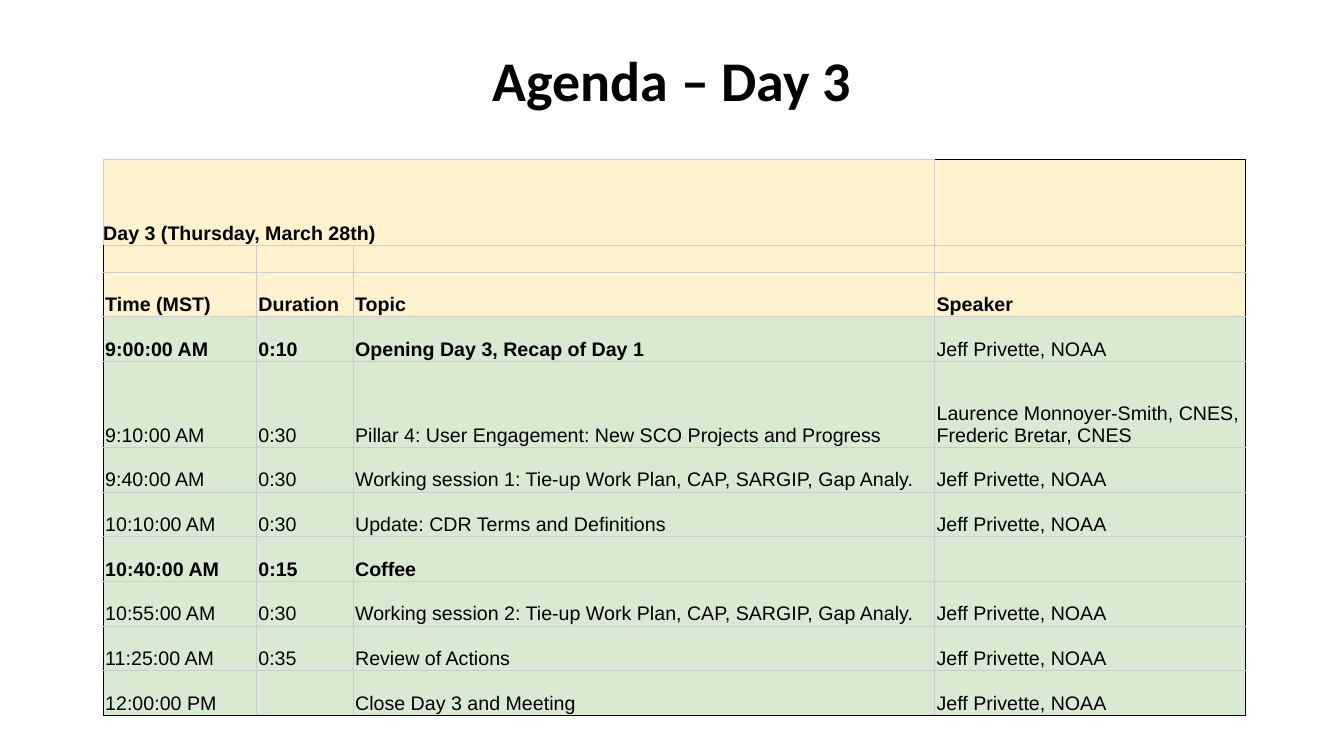
import pptx
import pptx.dml.color
import pptx.enum.text
import pptx.util
from dataclasses import dataclass
from lxml import etree
from pptx.oxml.ns import qn

Pt = pptx.util.Pt
Anchor = pptx.enum.text.MSO_ANCHOR


@dataclass(frozen=True)
class Theme:
    """Colours, fonts and type sizes of the agenda."""
    ink: str = "000000"
    heading_fill: str = "FFF2CC"
    session_fill: str = "D9EAD3"
    grid: str = "CCCCCC"
    frame: str = "000000"
    title_font: str = "Calibri"
    table_font: str = "Arial"
    title_size: int = 40
    table_size: int = 14
    line_width: float = 0.5


THEME = Theme()
HOST = "Jeff Privette, NOAA"
HEADING_ROWS = 3
COLUMN_WIDTHS = (109.4, 69.1, 415.4, 222.2)
STANDARD, TALL, NARROW = 31.9, 61.5, 19.2
AGENDA = [
    (TALL, True, ("Day 3 (Thursday, March 28th)", "", "", "")),
    (NARROW, True, ("", "", "", "")),
    (STANDARD, True, ("Time (MST)", "Duration", "Topic", "Speaker")),
    (STANDARD, True, ("9:00:00 AM", "0:10", "Opening Day 3, Recap of Day 1", HOST)),
    (TALL, False, ("9:10:00 AM", "0:30",
                   "Pillar 4: User Engagement: New SCO Projects and Progress",
                   "Laurence Monnoyer-Smith, CNES,\nFrederic Bretar, CNES")),
    (STANDARD, False, ("9:40:00 AM", "0:30",
                       "Working session 1: Tie-up Work Plan, CAP, SARGIP, Gap Analy.", HOST)),
    (STANDARD, False, ("10:10:00 AM", "0:30", "Update: CDR Terms and Definitions", HOST)),
    (STANDARD, True, ("10:40:00 AM", "0:15", "Coffee", "")),
    (STANDARD, False, ("10:55:00 AM", "0:30",
                       "Working session 2: Tie-up Work Plan, CAP, SARGIP, Gap Analy.", HOST)),
    (STANDARD, False, ("11:25:00 AM", "0:35", "Review of Actions", HOST)),
    (STANDARD, False, ("12:00:00 PM", "", "Close Day 3 and Meeting", HOST)),
]


def apply(target, values):
    """Set each named attribute on the target."""
    for name, value in values.items():
        setattr(target, name, value)


def write(paragraph, words, font, size, bold):
    """Write words into a paragraph with one format."""
    paragraph.text = words
    for run in paragraph.runs:
        apply(run.font, {"name": font, "size": Pt(size), "bold": bold})
        run.font.color.rgb = pptx.dml.color.RGBColor.from_string(THEME.ink)


def add_title(slide, words):
    """Place and format the slide title."""
    title = slide.shapes.title
    apply(title, {"left": Pt(152), "top": Pt(11.5), "width": Pt(656), "height": Pt(90)})
    apply(title.text_frame, {"word_wrap": True, "vertical_anchor": Anchor.MIDDLE})
    heading = title.text_frame.paragraphs[0]
    write(heading, words, THEME.title_font, THEME.title_size, True)
    heading.alignment = pptx.enum.text.PP_ALIGN.CENTER


def border_cell(cell, colours):
    """Draw the left, right, top and bottom borders of a cell."""
    properties = cell._tc.get_or_add_tcPr()
    for position, (side, colour) in enumerate(zip("LRTB", colours)):
        line = etree.Element(qn(f"a:ln{side}"), w=str(int(Pt(THEME.line_width))))
        paint = etree.SubElement(line, qn("a:solidFill"))
        etree.SubElement(paint, qn("a:srgbClr"), val=colour)
        properties.insert(position, line)


def border_colours(row, column):
    """Return the border colours that frame the agenda at this cell."""
    last_column = column == len(COLUMN_WIDTHS) - 1
    framed = (column == 0 and row > 0, last_column,
              row == 0 and last_column, row == len(AGENDA) - 1)
    return [THEME.frame if edge else THEME.grid for edge in framed]


def fill_cell(cell, row, column, words, bold):
    """Format one agenda cell and write its words."""
    side = 0 if row == 0 else 1.5
    apply(cell, {"margin_left": Pt(side), "margin_right": Pt(side), "margin_top": Pt(0.75),
                 "margin_bottom": Pt(0.75), "vertical_anchor": Anchor.BOTTOM})
    cell.fill.solid()
    colour = THEME.heading_fill if row < HEADING_ROWS else THEME.session_fill
    cell.fill.fore_color.rgb = pptx.dml.color.RGBColor.from_string(colour)
    border_cell(cell, border_colours(row, column))
    entry = cell.text_frame.paragraphs[0]
    if words:
        write(entry, words, THEME.table_font, THEME.table_size, bold)
    else:
        etree.SubElement(entry._p, qn("a:endParaRPr"), sz=str(THEME.table_size * 100))


def add_agenda(slide):
    """Add the agenda table."""
    heights = [height for height, _, _ in AGENDA]
    agenda = slide.shapes.add_table(len(AGENDA), len(COLUMN_WIDTHS), Pt(73.7), Pt(113.7),
                                    Pt(sum(COLUMN_WIDTHS)), Pt(sum(heights))).table
    apply(agenda, {"first_row": False, "horz_banding": False})
    for column, width in zip(agenda.columns, COLUMN_WIDTHS):
        column.width = Pt(width)
    for row, (height, bold, entries) in enumerate(AGENDA):
        agenda.rows[row].height = Pt(height)
        for column, words in enumerate(entries):
            strong = bold and (row < HEADING_ROWS or column < len(entries) - 1)
            fill_cell(agenda.cell(row, column), row, column, words, strong)
    agenda.cell(0, 0).merge(agenda.cell(0, 2))


def main():
    """Build the agenda slide."""
    deck = pptx.Presentation()
    apply(deck, {"slide_width": Pt(960), "slide_height": Pt(540)})
    slide = deck.slides.add_slide(deck.slide_layouts.get_by_name("Title Only"))
    add_title(slide, "Agenda – Day 3")
    add_agenda(slide)
    deck.save("out.pptx")


if __name__ == "__main__":
    main()
